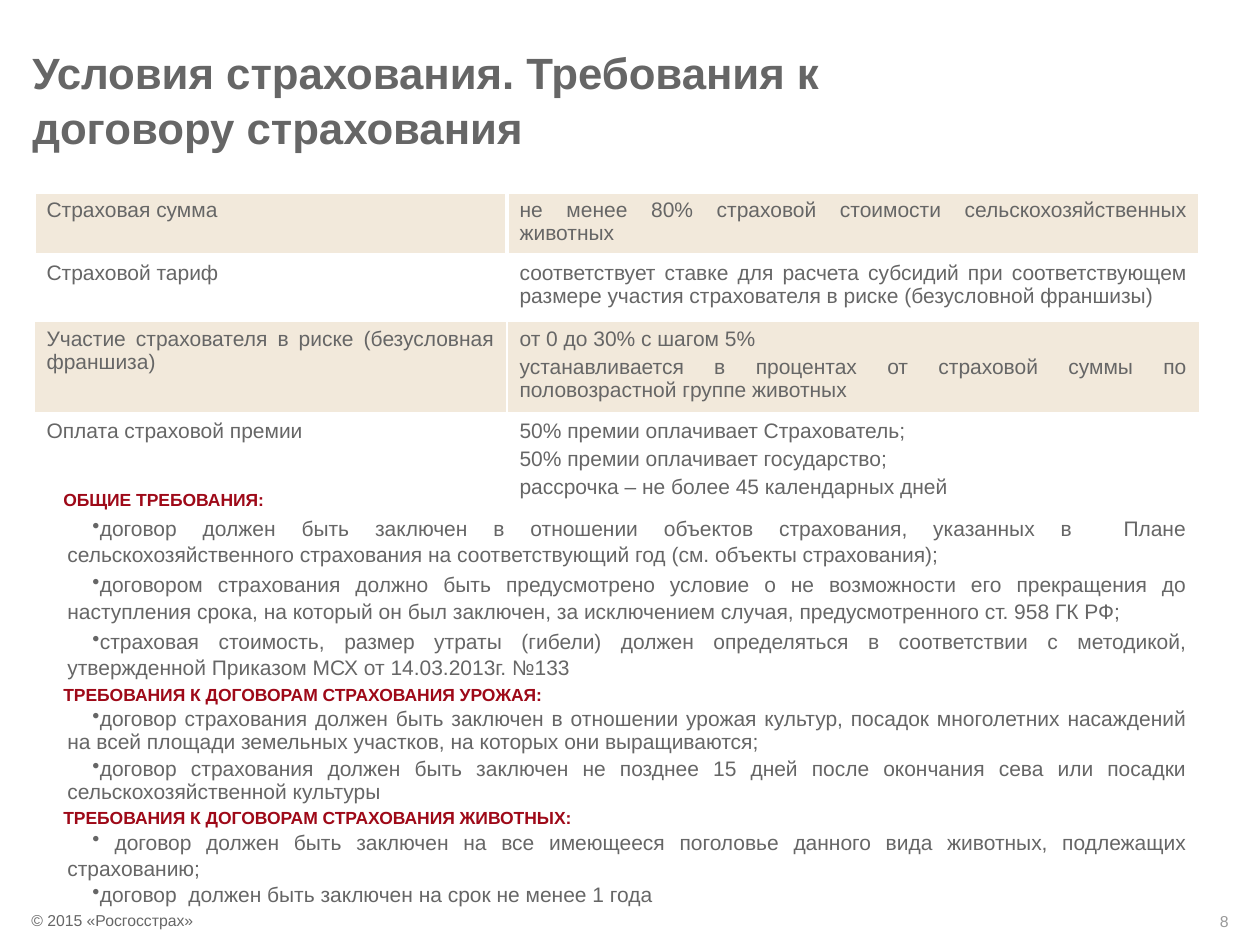
from dataclasses import dataclass

from lxml.etree import SubElement
from pptx import Presentation
from pptx.dml.color import RGBColor
from pptx.enum.text import MSO_ANCHOR as Anchor, PP_ALIGN as Align
from pptx.oxml.ns import qn
from pptx.util import Emu, Pt

PX_PER_INCH = 126
COLORS = {
    "text": "666666",
    "heading": "9E0918",
    "number": "999999",
    "band": "F2E9DB",
    "border": "FFFFFF",
}


@dataclass
class Row:
    height: int
    label: str
    terms: list[str]


@dataclass
class Section:
    heading: str
    items: list[str]
    line_spacing: float
    space_before: float


ROWS = [
    Row(61, "Страховая сумма",
        ["не менее 80% страховой стоимости сельскохозяйственных животных"]),
    Row(66, "Страховой тариф",
        ["соответствует ставке для расчета субсидий при соответствующем размере "
         "участия страхователя в риске (безусловной франшизы)"]),
    Row(90, "Участие страхователя в риске (безусловная франшиза)",
        ["от 0 до 30% с шагом 5%",
         "устанавливается в процентах от страховой суммы по половозрастной группе животных"]),
    Row(87, "Оплата страховой премии",
        ["50% премии оплачивает Страхователь;",
         "50% премии оплачивает государство;",
         "рассрочка – не более 45 календарных дней"]),
]

SECTIONS = [
    Section("ОБЩИЕ ТРЕБОВАНИЯ:", [
        "договор должен быть заключен в отношении объектов страхования, указанных в  Плане "
        "сельскохозяйственного страхования на соответствующий год (см. объекты страхования);",
        "договором страхования должно быть предусмотрено условие о не возможности его "
        "прекращения до наступления срока, на который он был заключен, за исключением случая, "
        "предусмотренного ст. 958 ГК РФ;",
        "страховая стоимость, размер утраты (гибели) должен определяться в соответствии с "
        "методикой, утвержденной Приказом МСХ от 14.03.2013г. №133",
    ], 1.04, 2.4),
    Section("ТРЕБОВАНИЯ К ДОГОВОРАМ СТРАХОВАНИЯ УРОЖАЯ:", [
        "договор страхования должен быть заключен в отношении урожая культур, посадок "
        "многолетних насаждений на всей площади земельных участков, на которых они выращиваются;",
        "договор страхования должен быть заключен не позднее 15 дней после окончания сева "
        "или посадки сельскохозяйственной культуры",
    ], 0.9, 2.4),
    Section("ТРЕБОВАНИЯ К ДОГОВОРАМ СТРАХОВАНИЯ ЖИВОТНЫХ:", [
        " договор должен быть заключен на все имеющееся поголовье данного вида животных, "
        "подлежащих страхованию;",
        "договор  должен быть заключен на срок не менее 1 года",
    ], 1.04, 0),
]


def px(length: int) -> Emu:
    return Emu(round(length * 914400 / PX_PER_INCH))


def write_text(frame, text: str, *, first=True, size=12, color="text", bold=False,
               align=Align.JUSTIFY, spacing=1.0, before=0.0, margin=0, indent=0, bullet=""):
    para = frame.paragraphs[0] if first else frame.add_paragraph()
    properties = para._p.get_or_add_pPr()
    properties.set("marL", str(px(margin)))
    properties.set("indent", str(px(indent)))
    if bullet:
        SubElement(properties, qn("a:buChar"), char=bullet)
    para.alignment = align
    para.line_spacing = spacing
    para.space_before = Pt(0 if first else before)
    span = para.add_run()
    span.text = text
    span.font.name = "Arial"
    span.font.size = Pt(size)
    span.font.bold = bold
    span.font.color.rgb = RGBColor.from_string(COLORS[color])


def add_box(page, left: int, top: int, width: int, height: int, anchor=Anchor.TOP):
    box = page.shapes.add_textbox(px(left), px(top), px(width), px(height))
    frame = box.text_frame
    frame.word_wrap = True
    frame.vertical_anchor = anchor
    return frame


def set_borders(cell, widths: dict[str, float]) -> None:
    properties = cell._tc.get_or_add_tcPr()
    for position, (side, width) in enumerate(widths.items()):
        line = SubElement(properties, qn(f"a:ln{side}"), w=str(Pt(width)))
        fill = SubElement(line, qn("a:solidFill"))
        SubElement(fill, qn("a:srgbClr"), val=COLORS["border"])
        properties.insert(position, line)


def add_terms_table(page, left: int, top: int, columns: list[int], rows: list[Row]) -> None:
    height = sum(row.height for row in rows)
    table = page.shapes.add_table(len(rows), len(columns), px(left), px(top),
                                  px(sum(columns)), px(height)).table
    table.first_row = False
    table.horz_banding = False
    for column, width in zip(table.columns, columns):
        column.width = px(width)
    for index, row in enumerate(rows):
        table.rows[index].height = px(row.height)
        side = 2.25 if index == 0 else 1.5
        upper = 2.25 if index < 2 else 1.5
        for cell, texts in zip(table.rows[index].cells, ([row.label], row.terms)):
            if index % 2 == 0:
                cell.fill.solid()
                cell.fill.fore_color.rgb = RGBColor.from_string(COLORS["band"])
            else:
                cell.fill.background()
            set_borders(cell, {"L": side, "R": side, "T": upper, "B": side})
            for number, text in enumerate(texts):
                write_text(cell.text_frame, text, first=number == 0, before=2.4)


def add_requirements(page, sections: list[Section]) -> None:
    frame = add_box(page, 26, 483, 1174, 406)
    for index, section in enumerate(sections):
        write_text(frame, section.heading, first=index == 0, size=10, color="heading",
                   bold=True, before=2, indent=25)
        for item in section.items:
            write_text(frame, item, first=False, spacing=section.line_spacing,
                       before=section.space_before, margin=29, indent=25, bullet="•")


def main() -> None:
    deck = Presentation()
    deck.slide_width, deck.slide_height = px(1260), px(945)
    page = deck.slides.add_slide(deck.slide_layouts[6])

    title = add_box(page, 20, 29, 1021, 139, Anchor.MIDDLE)
    write_text(title, "Условия страхования. Требования к договору страхования",
               size=25, bold=True, align=Align.LEFT, spacing=1.05)
    add_terms_table(page, 34, 192, [473, 693], ROWS)
    add_requirements(page, SECTIONS)
    write_text(add_box(page, 1142, 906, 99, 32), "8",
               size=9, color="number", align=Align.RIGHT)
    write_text(add_box(page, 19, 905, 325, 32), "© 2015 «Росгосстрах»",
               size=9, align=Align.LEFT)

    deck.save("out.pptx")


if __name__ == "__main__":
    main()
